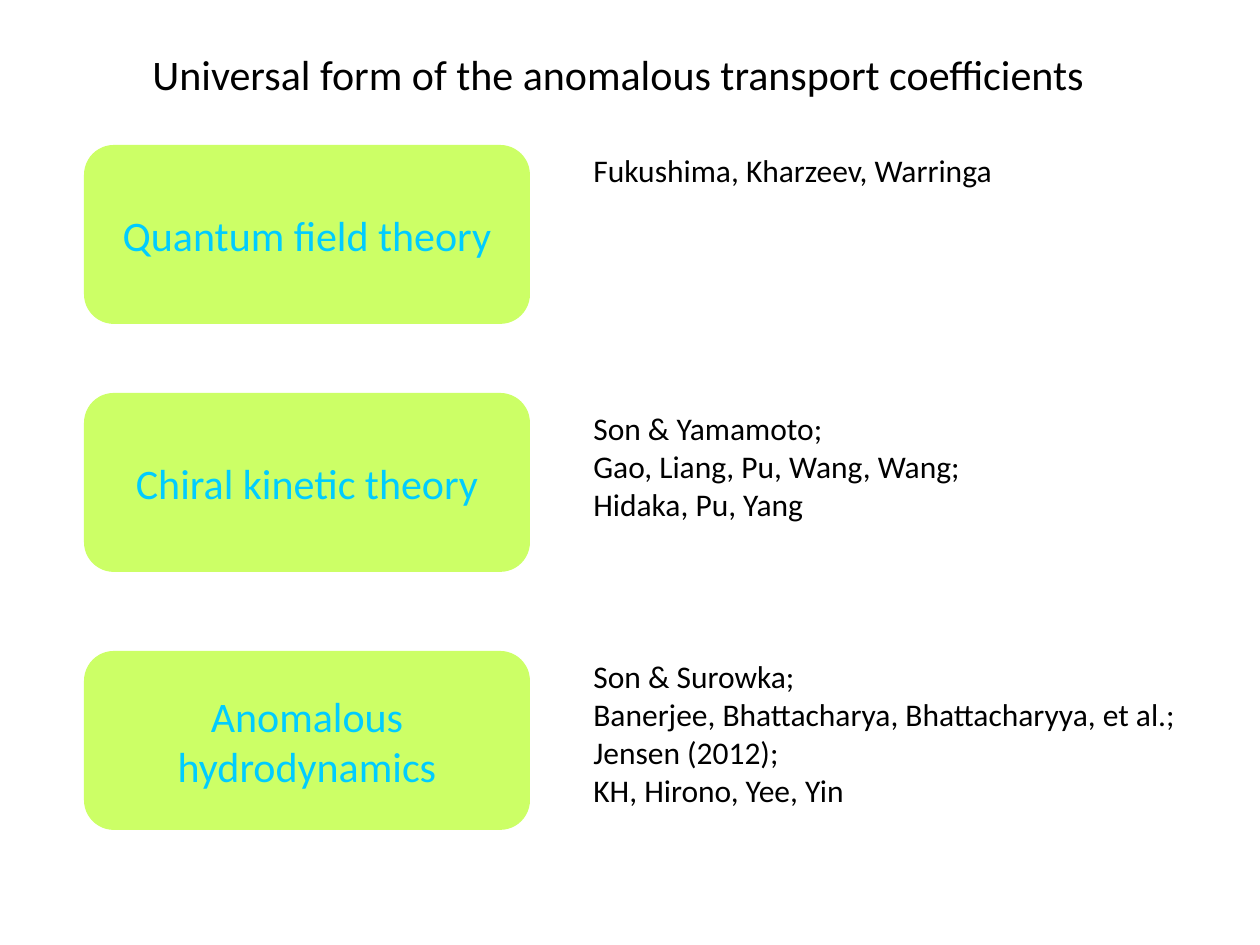
from dataclasses import dataclass

from pptx import Presentation
from pptx import util as u
from pptx.dml.color import RGBColor
from pptx.enum import shapes, text

PX_PER_INCH = 126
FONT = "Calibri"
LIME = RGBColor(0xCC, 0xFF, 0x66)
SKY = RGBColor(0x00, 0xCC, 0xFF)
BLACK = RGBColor(0x00, 0x00, 0x00)

THEORY_LEFT, THEORY_WIDTH, THEORY_HEIGHT = 84, 446, 179
AUTHORS_LEFT = 581


@dataclass
class Theory:
    name: str
    top: int
    authors: list[str]
    authors_top: int
    authors_width: int
    authors_height: int
    wrap: bool = False


THEORIES = [
    Theory("Quantum field theory", 145, ["Fukushima, Kharzeev, Warringa"], 145, 433, 50, True),
    Theory(
        "Chiral kinetic theory",
        393,
        ["Son & Yamamoto;", "Gao, Liang, Pu, Wang, Wang;", "Hidaka, Pu, Yang"],
        403,
        404,
        127,
    ),
    Theory(
        "Anomalous hydrodynamics",
        651,
        [
            "Son & Surowka;",
            "Banerjee, Bhattacharya, Bhattacharyya, et al.;",
            "Jensen (2012);",
            "KH, Hirono, Yee, Yin",
        ],
        651,
        621,
        165,
    ),
]


def px(length: int) -> int:
    return round(length * u.Inches(1) / PX_PER_INCH)


def write(frame, lines: list[str], size: int, color: RGBColor, align) -> None:
    frame.text = "\n".join(lines)
    for paragraph in frame.paragraphs:
        paragraph.alignment = align
        for run in paragraph.runs:
            run.font.name = FONT
            run.font.size = u.Pt(size)
            run.font.color.rgb = color


def add_text(slide, left: int, top: int, width: int, height: int,
             lines: list[str], size: int, wrap: bool = False) -> None:
    box = slide.shapes.add_textbox(px(left), px(top), px(width), px(height))
    box.text_frame.word_wrap = wrap
    box.text_frame.auto_size = text.MSO_AUTO_SIZE.SHAPE_TO_FIT_TEXT
    write(box.text_frame, lines, size, BLACK, text.PP_ALIGN.LEFT)


def add_theory(slide, theory: Theory) -> None:
    shape = slide.shapes.add_shape(
        shapes.MSO_SHAPE.ROUNDED_RECTANGLE,
        px(THEORY_LEFT), px(theory.top), px(THEORY_WIDTH), px(THEORY_HEIGHT),
    )
    shape.shadow.inherit = False
    shape.fill.solid()
    shape.fill.fore_color.rgb = LIME
    shape.line.fill.background()
    shape.text_frame.word_wrap = True
    shape.text_frame.vertical_anchor = text.MSO_ANCHOR.MIDDLE
    write(shape.text_frame, [theory.name], 24, SKY, text.PP_ALIGN.CENTER)
    add_text(slide, AUTHORS_LEFT, theory.authors_top, theory.authors_width,
             theory.authors_height, theory.authors, 18, theory.wrap)


def main() -> None:
    presentation = Presentation()
    presentation.slide_width = px(1260)
    presentation.slide_height = px(945)
    slide = presentation.slides.add_slide(presentation.slide_layouts[6])
    add_text(slide, 140, 42, 966, 63,
             ["Universal form of the anomalous transport coefficients"], 24)
    for theory in THEORIES:
        add_theory(slide, theory)
    presentation.save("out.pptx")


if __name__ == "__main__":
    main()
